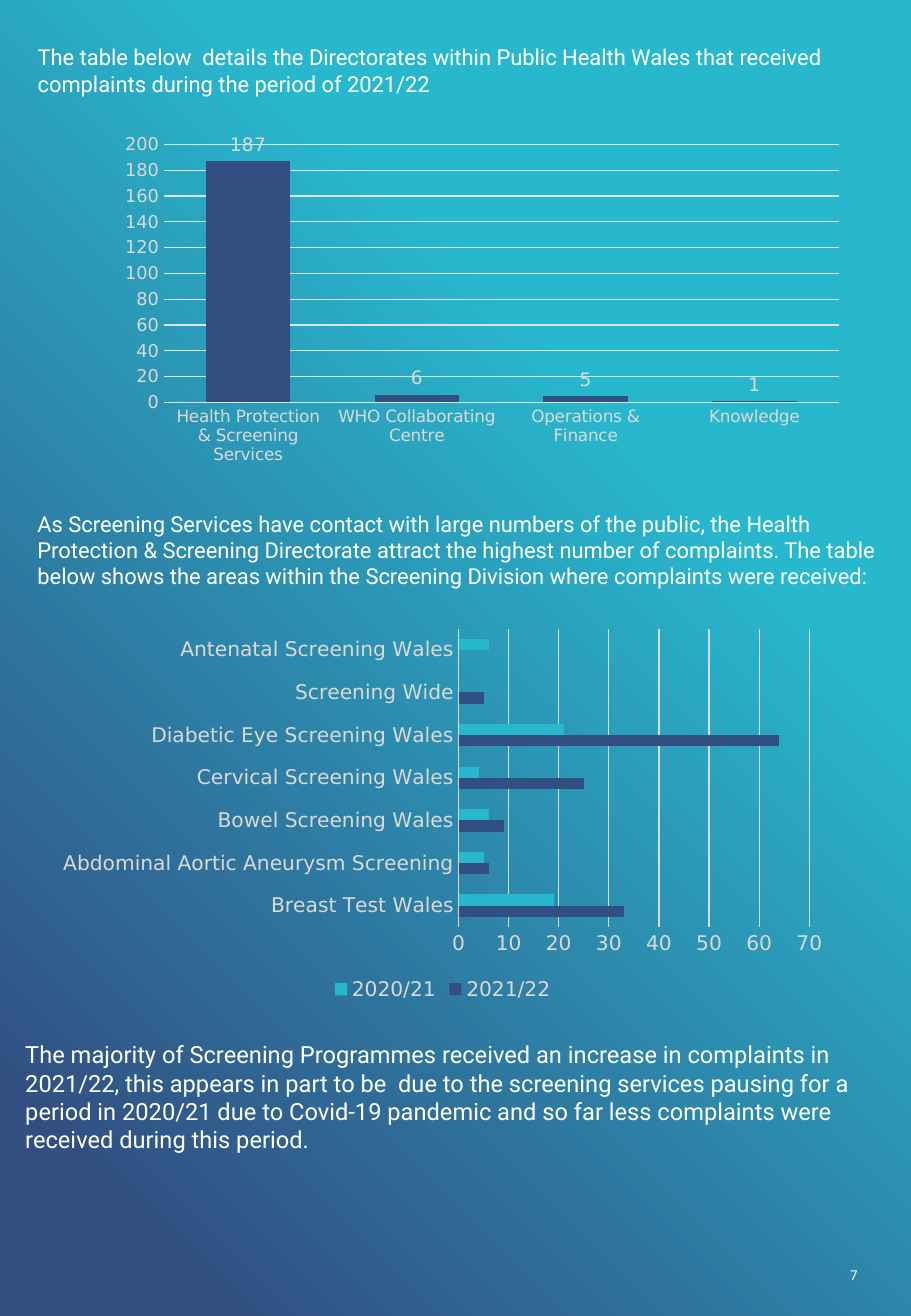
from collections import namedtuple
from dataclasses import dataclass

from lxml.etree import SubElement
from pptx import Presentation
from pptx.chart.data import CategoryChartData
from pptx.dml.color import RGBColor
from pptx.enum.chart import XL_CHART_TYPE, XL_LABEL_POSITION, XL_LEGEND_POSITION, XL_TICK_MARK
from pptx.enum.text import MSO_ANCHOR, MSO_AUTO_SIZE, PP_ALIGN
from pptx.oxml.ns import qn
from pptx.util import Inches, Pt

Box = namedtuple("Box", "left top width height")


@dataclass(frozen=True)
class Theme:
    """Colours, fonts and type sizes of the report page."""
    navy: RGBColor = RGBColor.from_string("324F82")
    teal: RGBColor = RGBColor.from_string("28B8CE")
    white: RGBColor = RGBColor.from_string("FFFFFF")
    grey: RGBColor = RGBColor.from_string("D9D9D9")
    pale: RGBColor = RGBColor.from_string("DBE3F1")
    text_font: str = "Roboto"
    chart_font: str = "DejaVu Sans"
    intro: float = 13
    closing: float = 14
    folio: float = 8
    small_label: float = 10
    scale_label: float = 10.5
    bar_label: float = 11
    large_label: float = 12


THEME = Theme()

INTRO = ("The table below  details the Directorates within Public Health Wales that received "
         "complaints during the period of 2021/22")
SCREENING = ("As Screening Services have contact with large numbers of the public, the Health "
             "Protection & Screening Directorate attract the highest number of complaints. The table "
             "below shows the areas within the Screening Division where complaints were received:")
CLOSING = ("The majority of Screening Programmes received an increase in complaints in 2021/22, this "
           "appears in part to be  due to the screening services pausing for a period in 2020/21 due "
           "to Covid-19 pandemic and so far less complaints were received during this period.")

DIRECTORATES = {
    "Health Protection & Screening Services": 187,
    "WHO Collaborating Centre": 6,
    "Operations & Finance": 5,
    "Knowledge": 1,
}
SCREENING_AREAS = {
    "Breast Test Wales": (33, 19),
    "Abdominal Aortic Aneurysm Screening": (6, 5),
    "Bowel Screening Wales": (9, 6),
    "Cervical Screening Wales": (25, 4),
    "Diabetic Eye Screening Wales": (64, 21),
    "Screening Wide": (5, None),
    "Antenatal Screening Wales": (None, 6),
}


def paint_background(page):
    """Fill the page with a diagonal gradient from navy to teal."""
    fill = page.background.fill
    fill.gradient()
    fill.gradient_angle = 45
    for stop, color, position in zip(fill.gradient_stops, (THEME.navy, THEME.teal), (0.10, 0.69)):
        stop.color.rgb = color
        stop.position = position


def write_text(shape, box, text, size):
    """Place a text shape in the box and write one white paragraph."""
    shape.left, shape.top, shape.width, shape.height = map(Inches, box)
    frame = shape.text_frame
    frame.word_wrap = True
    frame.auto_size = MSO_AUTO_SIZE.SHAPE_TO_FIT_TEXT
    frame.vertical_anchor = MSO_ANCHOR.TOP
    para = frame.paragraphs[0]
    para.text = text
    para.alignment = PP_ALIGN.LEFT
    para.font.name = THEME.text_font
    para.font.size = Pt(size)
    para.font.color.rgb = THEME.white


def add_text(page, box, text, size):
    """Add a text box that fills the given box."""
    write_text(page.shapes.add_textbox(*map(Inches, box)), box, text, size)


def style_font(font, size):
    """Set the chart typeface, size and colour."""
    font.name = THEME.chart_font
    font.size = Pt(size)
    font.color.rgb = THEME.grey


def style_axis(axis, size, line):
    """Hide tick marks and set the labels and line of an axis."""
    axis.major_tick_mark = axis.minor_tick_mark = XL_TICK_MARK.NONE
    style_font(axis.tick_labels.font, size)
    if line is None:
        axis.format.line.fill.background()
    else:
        axis.format.line.color.rgb = line
        axis.format.line.width = Pt(0.75)


def add_bar_chart(page, box, kind, data, colors, gap, sizes, line, scale):
    """Add a bar or column chart in the box with the shared styling."""
    chart = page.shapes.add_chart(kind, *map(Inches, box), data).chart
    chart.has_title = False
    chart.has_legend = False
    style_font(chart.font, THEME.small_label)
    category_size, value_size = sizes
    style_axis(chart.category_axis, category_size, line)
    values = chart.value_axis
    style_axis(values, value_size, None)
    values.minimum_scale = 0
    values.maximum_scale, values.major_unit = scale
    values.has_major_gridlines = True
    values.major_gridlines.format.line.color.rgb = line
    values.major_gridlines.format.line.width = Pt(0.75)
    plot = chart.plots[0]
    plot.gap_width = gap
    plot.vary_by_categories = False
    for series, color in zip(plot.series, colors):
        series.invert_if_negative = False
        series.format.fill.solid()
        series.format.fill.fore_color.rgb = color
    return chart


def set_plot_box(chart, box):
    """Fix the inner plot area as fractions of the chart."""
    area = chart._chartSpace.chart.plotArea
    for old in area.findall(qn("c:layout")):
        area.remove(old)
    layout = SubElement(area, qn("c:layout"))
    area.insert(0, layout)
    manual = SubElement(layout, qn("c:manualLayout"))
    settings = [("layoutTarget", "inner"), ("xMode", "edge"), ("yMode", "edge"),
                *zip("xywh", box)]
    for tag, value in settings:
        SubElement(manual, qn(f"c:{tag}")).set("val", str(value))


def add_directorate_chart(page, box):
    """Draw the complaints by directorate as labelled columns."""
    data = CategoryChartData()
    data.categories = DIRECTORATES.keys()
    data.add_series("Series 1", DIRECTORATES.values())
    chart = add_bar_chart(page, box, XL_CHART_TYPE.COLUMN_CLUSTERED, data, [THEME.navy], 100,
                          (THEME.small_label, THEME.scale_label), THEME.pale, (200, 20))
    set_plot_box(chart, Box(0.12, 0.09, 0.88, 0.71))
    plot = chart.plots[0]
    plot.overlap = -24
    labels = plot.series[0].data_labels
    labels.show_value = True
    labels.position = XL_LABEL_POSITION.OUTSIDE_END
    style_font(labels.font, THEME.bar_label)


def add_screening_chart(page, box):
    """Draw the complaints by screening area as paired bars for two years."""
    data = CategoryChartData()
    data.categories = SCREENING_AREAS.keys()
    for year, values in zip(("2021/22", "2020/21"), zip(*SCREENING_AREAS.values())):
        data.add_series(year, values)
    chart = add_bar_chart(page, box, XL_CHART_TYPE.BAR_CLUSTERED, data, [THEME.navy, THEME.teal], 182,
                          (THEME.large_label, THEME.large_label), THEME.grey, (70, 10))
    chart.has_legend = True
    chart.legend.position = XL_LEGEND_POSITION.BOTTOM
    chart.legend.include_in_layout = False
    style_font(chart.legend.font, THEME.large_label)


def main():
    """Build the complaints page and save the deck."""
    deck = Presentation()
    deck.slide_width, deck.slide_height = Inches(7.5), Inches(10.83)
    page = deck.slides.add_slide(deck.slide_layouts.get_by_name("Title Only"))
    paint_background(page)
    write_text(page.shapes.title, Box(0.21, 0.31, 7.32, 0.54), INTRO, THEME.intro)
    add_directorate_chart(page, Box(0.59, 0.92, 6.32, 2.99))
    add_text(page, Box(0.21, 4.15, 7.2, 0.76), SCREENING, THEME.intro)
    add_screening_chart(page, Box(0.39, 5.11, 6.51, 3.17))
    add_text(page, Box(0.11, 8.51, 7.3, 1.04), CLOSING, THEME.closing)
    add_text(page, Box(6.9, 10.38, 0.34, 0.24), "7", THEME.folio)
    deck.save("out.pptx")


if __name__ == "__main__":
    main()
